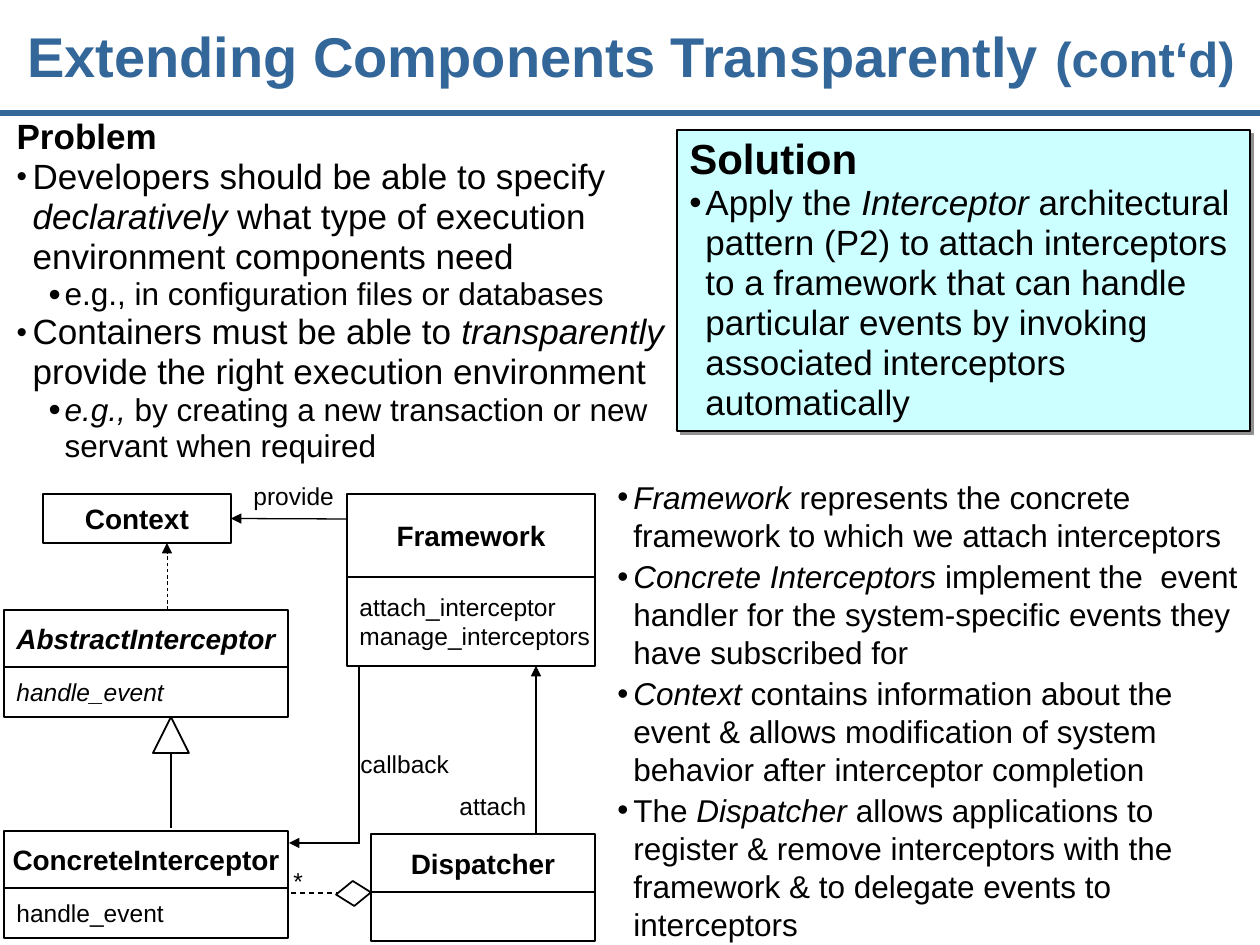
"""Builds the slide on extending components transparently with the Interceptor pattern."""
from lxml.etree import SubElement
from pptx import Presentation
from pptx.dml.color import RGBColor
from pptx.enum.dml import MSO_LINE as Dash
from pptx.enum.shapes import MSO_CONNECTOR as Connector, MSO_SHAPE as Shape
from pptx.enum.text import MSO_ANCHOR as Anchor, MSO_AUTO_SIZE as AutoSize, PP_ALIGN as Align
from pptx.oxml.ns import qn
from pptx.util import Pt

EMU_PER_PX = 914400 / 126
BLACK, WHITE, BLUE, CYAN, GREY = "000000", "FFFFFF", "336699", "CCFFFF", "919191"

# Text between bars is italic.
TITLE = [("Extending Components Transparently |(cont‘d)|",
          {"size": 32, "bold": True, "color": BLUE, "align": Align.CENTER})]
HEADING = {"size": 20, "bold": True, "margin": 16}
POINT = {"size": 20, "bullet": 85, "margin": 16}
DETAIL = {"size": 18, "bullet": 110, "margin": 48, "level": 1}
ROLE = {"size": 18, "bullet": 100, "margin": 16, "before": 2, "spacing": 1.0}
PROBLEM = [
    ("Problem", HEADING),
    ("Developers should be able to specify |declaratively| what type of execution "
     "environment components need", POINT),
    ("e.g., in configuration files or databases", DETAIL),
    ("Containers must be able to |transparently| provide the right execution environment", POINT),
    ("|e.g.,| by creating a new transaction or new servant when required", DETAIL),
]
SOLUTION = [
    ("Solution", {**HEADING, "size": 24}),
    ("Apply the |Interceptor| architectural pattern (P2) to attach interceptors to a framework "
     "that can handle particular events by invoking associated interceptors automatically",
     {**POINT, "bullet": 100}),
]
ROLES = [
    ("|Framework| represents the concrete framework to which we attach interceptors",
     {**ROLE, "before": 0}),
    ("|Concrete Interceptors| implement the  event handler for the system-specific events "
     "they have subscribed for", ROLE),
    ("|Context| contains information about the event & allows modification of system "
     "behavior after interceptor completion", ROLE),
    ("The |Dispatcher| allows applications to register & remove interceptors with the "
     "framework & to delegate events to interceptors", ROLE),
]

# Name, left, top, width, name height, members height, members.
CLASSES = [
    ("Context", 43, 494, 188, 49, 0, []),
    ("|AbstractInterceptor|", 4, 610, 284, 57, 50, ["|handle_event|"]),
    ("ConcreteInterceptor", 4, 831, 284, 57, 50, ["handle_event"]),
    ("Framework", 347, 494, 248, 83, 89, ["attach_interceptor", "manage_interceptors"]),
    ("Dispatcher", 371, 834, 224, 58, 49, []),
]
# Start, end, width in points, dashed, arrow at the end.
LINES = {
    "provide": ((347, 519), (231, 519), 0.75, False, True),
    "use": ((167, 610), (167, 543), 0.5, True, True),
    "inherit": ((171, 753), (171, 828), 0.75, False, False),
    "callback": ((359, 666), (359, 844), 0.75, False, False),
    "callback end": ((359, 843), (289, 843), 0.75, False, True),
    "attach": ((536, 833), (536, 666), 0.75, False, True),
    "aggregate": ((359, 893), (289, 893), 0.75, True, False),
}
LABELS = [("provide", 241, 475, 106), ("callback", 348, 743, 113),
          ("attach", 447, 785, 92), ("*", 281, 860, 35)]


def px(*lengths):
    return [round(length * EMU_PER_PX) for length in lengths]


def color(hex_string):
    return RGBColor.from_string(hex_string)


def write(shape, paragraphs, anchor=Anchor.TOP, wrap=True):
    frame = shape.text_frame
    settings = {"word_wrap": wrap, "auto_size": AutoSize.NONE, "vertical_anchor": anchor}
    for name, value in settings.items():
        setattr(frame, name, value)
    for index, (text, style) in enumerate(paragraphs):
        paragraph = frame.paragraphs[0] if index == 0 else frame.add_paragraph()
        properties = paragraph._p.get_or_add_pPr()
        margin = style.get("margin", 0)
        properties.set("marL", str(px(margin)[0]))
        properties.set("indent", str(px(-min(margin, 16))[0]))
        if "bullet" in style:
            SubElement(properties, qn("a:buSzPct"), val=str(style["bullet"] * 1000))
            SubElement(properties, qn("a:buFont"), typeface="Arial")
            SubElement(properties, qn("a:buChar"), char="•")
        else:
            SubElement(properties, qn("a:buNone"))
        layout = {"level": style.get("level", 0), "alignment": style.get("align", Align.LEFT),
                  "line_spacing": style.get("spacing", 0.95),
                  "space_before": Pt(style.get("before", 0)), "space_after": Pt(0)}
        for name, value in layout.items():
            setattr(paragraph, name, value)
        for part, words in enumerate(text.split("|")):
            if words:
                run = paragraph.add_run()
                run.text = words
                font = {"name": "Arial", "size": Pt(style["size"]),
                        "bold": style.get("bold", False), "italic": part % 2 == 1}
                for name, value in font.items():
                    setattr(run.font, name, value)
                run.font.color.rgb = color(style.get("color", BLACK))


def place(shape, *box):
    for name, value in zip(("left", "top", "width", "height"), px(*box)):
        setattr(shape, name, value)
    return shape


def add_shape(slide, kind, box, fill=WHITE):
    shape = slide.shapes.add_shape(kind, *px(*box))
    shape.shadow.inherit = False
    shape.fill.solid()
    shape.fill.fore_color.rgb = color(fill)
    shape.line.color.rgb = color(BLACK)
    shape.line.width = Pt(1)
    return shape


def add_line(slide, start, end, width, dashed=False, arrow=False, line_color=BLACK):
    line = slide.shapes.add_connector(Connector.STRAIGHT, *px(*start, *end))
    line.line.color.rgb = color(line_color)
    line.line.width = Pt(width)
    if dashed:
        line.line.dash_style = Dash.DASH
    properties = line._element.spPr
    if arrow:
        SubElement(properties.find(qn("a:ln")), qn("a:tailEnd"), type="triangle")
    SubElement(properties, qn("a:effectLst"))
    return line


def add_class(slide, name, left, top, width, name_height, members_height, members):
    box = add_shape(slide, Shape.RECTANGLE, (left, top, width, name_height))
    heading = {"size": 16, "bold": True, "align": Align.CENTER, "spacing": 1.0}
    write(box, [(name, heading)], Anchor.MIDDLE, False)
    if members_height:
        lower = add_shape(slide, Shape.RECTANGLE,
                          (left, top + name_height, width, members_height))
        member_style = {"size": 14, "spacing": 1.0}
        write(lower, [(member, member_style) for member in members], Anchor.MIDDLE, False)
    return box


def add_solution(slide):
    box = add_shape(slide, Shape.RECTANGLE, (677, 130, 573, 301), CYAN)
    write(box, SOLUTION)
    effects = box._element.spPr.find(qn("a:effectLst"))
    shadow = SubElement(effects, qn("a:outerShdw"), dist=str(Pt(2.8)), dir="2700000",
                        algn="ctr", rotWithShape="0")
    SubElement(shadow, qn("a:srgbClr"), val=GREY)


def main():
    presentation = Presentation()
    presentation.slide_width, presentation.slide_height = px(1260, 945)
    slide = presentation.slides.add_slide(presentation.slide_layouts[1])
    add_line(slide, (0, 113), (1260, 113), 3.75, line_color=BLUE)

    title = place(slide.shapes.title, 6, -5, 1250, 126)
    write(title, TITLE, Anchor.MIDDLE)
    continued = title.text_frame.paragraphs[0].runs[1].font
    continued.size, continued.italic = Pt(28), False
    write(place(slide.placeholders[1], 4, 111, 673, 359), PROBLEM)
    write(slide.shapes.add_textbox(*px(605, 472, 661, 441)), ROLES)

    boxes = {row[0]: add_class(slide, *row) for row in CLASSES}
    lines = {name: add_line(slide, *row) for name, row in LINES.items()}
    lines["provide"].end_connect(boxes["Context"], 3)
    add_shape(slide, Shape.ISOSCELES_TRIANGLE, (153, 717, 36, 36))
    add_shape(slide, Shape.FLOWCHART_DECISION, (341, 876, 25, 35)).rotation = 86.5
    for text, left, top, width in LABELS:
        label = slide.shapes.add_textbox(*px(left, top, width, 42))
        write(label, [(text, {"size": 14, "spacing": 1.0})], wrap=False)
    add_solution(slide)
    presentation.save("out.pptx")


if __name__ == "__main__":
    main()
